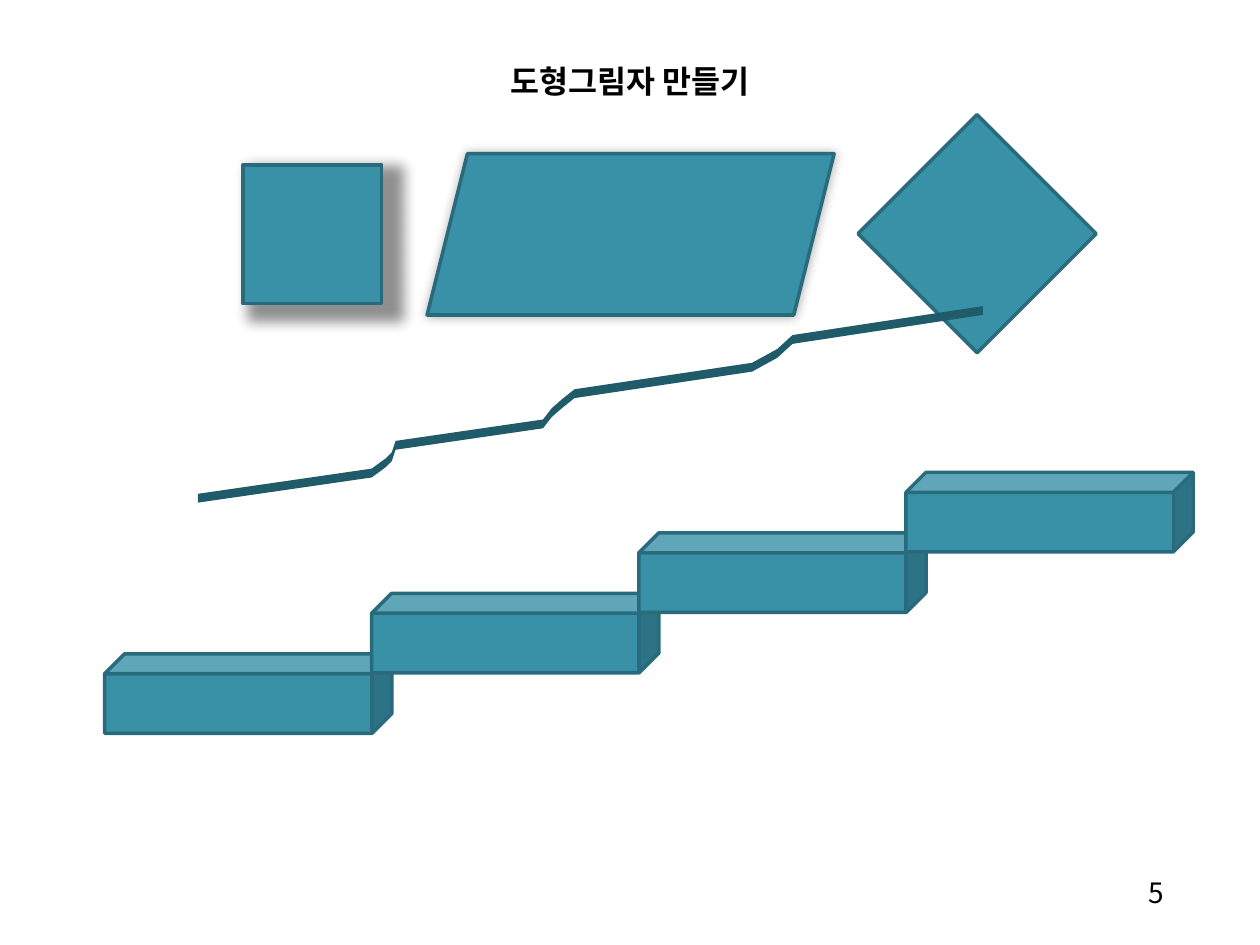
from lxml import etree
from pptx import Presentation
from pptx.dml.color import RGBColor
from pptx.enum.shapes import MSO_SHAPE as Preset
from pptx.enum.text import MSO_ANCHOR as Anchor, PP_ALIGN as Align
from pptx.oxml.ns import qn
from pptx.util import Inches, Pt

FONT = "Noto Sans CJK KR"
BLACK = RGBColor(0x00, 0x00, 0x00)
TEAL = RGBColor(0x38, 0x91, 0xA7)
OUTLINE = RGBColor(0x29, 0x6B, 0x7C)
RIBBON = RGBColor(0x20, 0x5B, 0x6A)

# Upper edge of the stepped ribbon, in inches
RIBBON_EDGE = [
    (1.57, 3.92), (2.95, 3.72), (3.06, 3.64), (3.11, 3.59), (3.14, 3.5),
    (4.31, 3.33), (4.38, 3.24), (4.46, 3.17), (4.56, 3.09),
    (5.97, 2.88), (6.17, 2.77), (6.29, 2.66), (7.8, 2.43),
]
RIBBON_DEPTH = 0.07


def add_label(page, text, left, top, width, height, size, bold=False):
    box = page.shapes.add_textbox(
        Inches(left), Inches(top), Inches(width), Inches(height))
    frame = box.text_frame
    frame.word_wrap = True
    frame.vertical_anchor = Anchor.MIDDLE
    para = frame.paragraphs[0]
    para.text = text
    para.alignment = Align.CENTER
    para.font.size = Pt(size)
    para.font.bold = bold
    para.font.name = FONT
    para.font.color.rgb = BLACK
    # East Asian text takes its own typeface
    props = para.runs[0].font
    props.name = FONT
    run_props = para.runs[0]._r.get_or_add_rPr()
    etree.SubElement(run_props, qn("a:ea"), typeface=FONT)


def add_solid(shapes, preset, left, top, width, height):
    shape = shapes.add_shape(
        preset, Inches(left), Inches(top), Inches(width), Inches(height))
    shape.shadow.inherit = False
    shape.fill.solid()
    shape.fill.fore_color.rgb = TEAL
    shape.line.color.rgb = OUTLINE
    shape.line.width = Pt(2)
    return shape


def add_shadow(shape, opacity, blur, distance, angle, scale=100, align="ctr"):
    effects = shape._element.spPr.find(qn("a:effectLst"))
    shadow = etree.SubElement(
        effects, qn("a:outerShdw"), blurRad=str(Pt(blur)),
        dist=str(Pt(distance)), dir=str(angle * 60000),
        sx=str(scale * 1000), sy=str(scale * 1000),
        algn=align, rotWithShape="0")
    color = etree.SubElement(shadow, qn("a:srgbClr"), val=str(BLACK))
    etree.SubElement(color, qn("a:alpha"), val=str(opacity * 1000))


def add_ribbon(page):
    lower = [(x, y + RIBBON_DEPTH) for x, y in reversed(RIBBON_EDGE)]
    points = [(Inches(x), Inches(y)) for x, y in RIBBON_EDGE + lower]
    builder = page.shapes.build_freeform(*points[0])
    builder.add_line_segments(points[1:], close=True)
    ribbon = builder.convert_to_shape()
    ribbon.shadow.inherit = False
    ribbon.fill.solid()
    ribbon.fill.fore_color.rgb = RIBBON
    ribbon.line.fill.background()


def add_stairs(page):
    stairs = page.shapes.add_group_shape()
    for step in range(4):
        add_solid(stairs.shapes, Preset.CUBE,
                  0.83 + 2.12 * step, 5.19 - 0.48 * step, 2.28, 0.63)


def main():
    deck = Presentation()
    deck.slide_width, deck.slide_height = Inches(10), Inches(7.5)
    page = deck.slides.add_slide(deck.slide_layouts[6])

    # Page number
    add_label(page, "5", 8.86, 6.9, 0.63, 0.37, 16)

    # Flat shapes with and without shadow
    square = add_solid(page.shapes, Preset.RECTANGLE, 1.93, 1.31, 1.1, 1.1)
    add_shadow(square, 44, 8, 4, 23, scale=110, align="tl")
    slanted = add_solid(page.shapes, Preset.PARALLELOGRAM, 3.39, 1.22, 3.23, 1.28)
    add_shadow(slanted, 30, 6, 0, 315)
    add_solid(page.shapes, Preset.DIAMOND, 6.81, 0.91, 1.89, 1.89)

    # Ribbon and stairs
    add_ribbon(page)
    add_stairs(page)

    # Title
    add_label(page, "도형그림자 만들기", 1.3, 0.44, 7.4, 0.4, 18, bold=True)

    deck.save("out.pptx")


if __name__ == "__main__":
    main()
